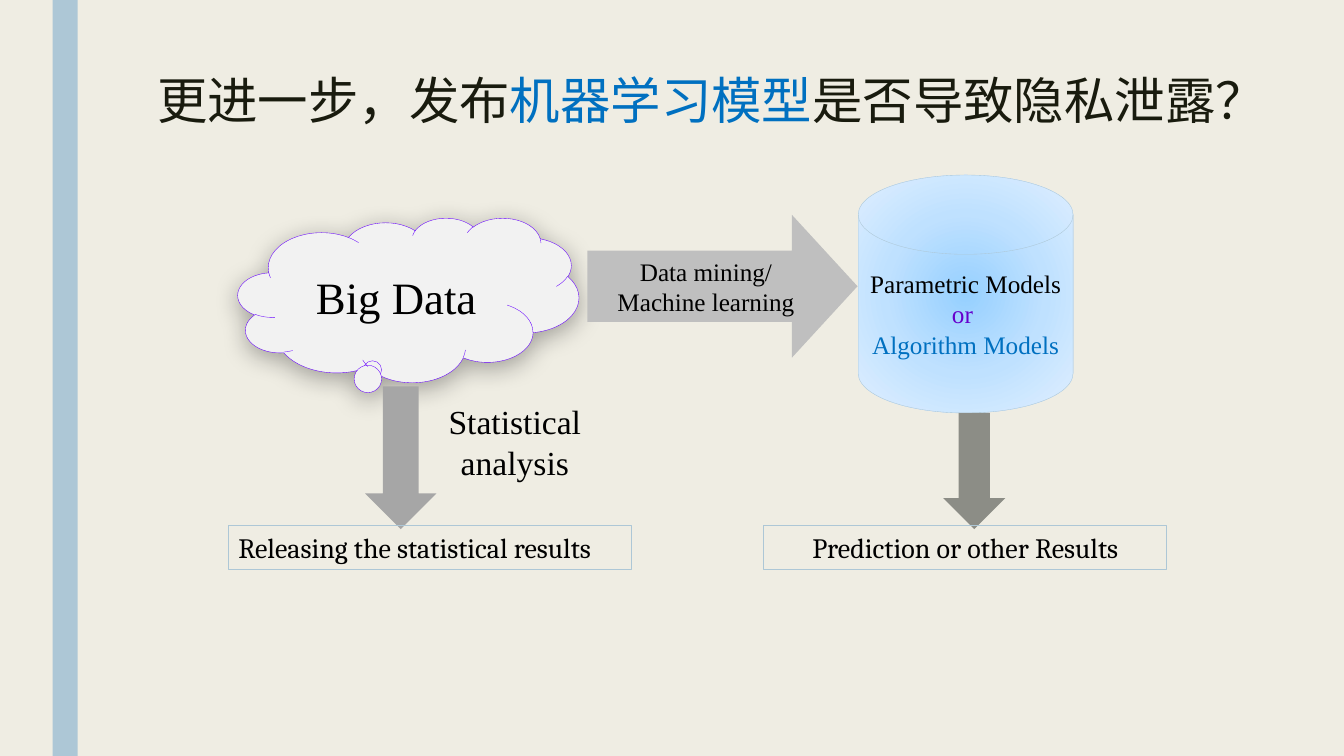
import pptx
import pptx.util
import pptx.oxml
import pptx.dml.color
import pptx.enum.shapes
import pptx.enum.text

Pt = pptx.util.Pt
Kind = pptx.enum.shapes.MSO_SHAPE
Align = pptx.enum.text.PP_ALIGN
Anchor = pptx.enum.text.MSO_ANCHOR
SERIF = "Times New Roman"
DRAWING = 'xmlns:a="http://schemas.openxmlformats.org/drawingml/2006/main"'


def color(value):
    return pptx.dml.color.RGBColor.from_string(value)


def add_box(kind, left, top, width, height, fill=None, line=None, weight=0.25,
            lines=(), size=18, font=SERIF, align=Align.CENTER, anchor=Anchor.MIDDLE):
    box = page.shapes.add_shape(kind, Pt(left), Pt(top), Pt(width), Pt(height))
    box.shadow.inherit = False
    if fill:
        box.fill.solid()
        box.fill.fore_color.rgb = color(fill)
    else:
        box.fill.background()
    if line:
        box.line.color.rgb = color(line)
        box.line.width = Pt(weight)
    else:
        box.line.fill.background()
    frame = box.text_frame
    frame.word_wrap = True
    frame.vertical_anchor = anchor
    frame.text = "\n".join(lines)
    for para in frame.paragraphs:
        para.alignment = align
        for span in para.runs:
            span.font.size = Pt(size)
            span.font.name = font
            span.font.color.rgb = color("000000")
    return box


deck = pptx.Presentation()
deck.slide_width, deck.slide_height = Pt(960), Pt(540)
page = deck.slides.add_slide(deck.slide_layouts[5])
page.background.fill.solid()
page.background.fill.fore_color.rgb = color("EFEDE3")

add_box(Kind.RECTANGLE, 37.5, 0, 18, 540, "ADC7D6")

title = page.shapes.title
title.left, title.top, title.width, title.height = Pt(105), Pt(31), Pt(809.5), Pt(85.5)
title.text_frame.vertical_anchor = Anchor.MIDDLE
title_para = title.text_frame.paragraphs[0]
title_para.alignment = Align.LEFT
title_para.line_spacing = 0.89
for words, tint in (("更进一步，发布", "191B0E"), ("机器学习模型", "0070C0"),
                    ("是否导致隐私泄露？", "191B0E")):
    span = title_para.add_run()
    span.text = words
    span.font.size = Pt(36)
    span.font.name = "Lato"
    span.font.color.rgb = color(tint)

cloud = add_box(Kind.CLOUD_CALLOUT, 170, 155.5, 243.5, 117.5, "F2F2F2", "6600FF",
                lines=["Big Data"], size=32)
cloud.adjustments[0] = -0.104
cloud.adjustments[1] = 0.42
effects = cloud._element.spPr.find(pptx.oxml.ns.qn("a:effectLst"))
effects.append(pptx.oxml.parse_xml(
    f'<a:outerShdw {DRAWING} blurRad="{Pt(17.8)}" dist="{Pt(4)}" dir="5220000" rotWithShape="0">'
    '<a:srgbClr val="000000"><a:alpha val="33000"/></a:srgbClr></a:outerShdw>'))

models = add_box(Kind.FLOWCHART_MAGNETIC_DISK, 613, 125, 153.5, 170, line="ADC7D6",
                 lines=["Parametric Models ", "Algorithm Models"])
parametric, algorithm = models.text_frame.paragraphs
span = parametric.add_run()
span.text = "or "
span.font.size = Pt(18)
span.font.name = SERIF
span.font.color.rgb = color("6600CC")
algorithm.runs[0].font.color.rgb = color("0070C0")
stops = "".join(
    f'<a:gs pos="{place * 1000}"><a:srgbClr val="{tint}"/></a:gs>'
    for place, tint in ((0, "96D0FF"), (50, "BFE1FF"), (100, "E0EFFF")))
gradient = pptx.oxml.parse_xml(
    f'<a:gradFill {DRAWING} rotWithShape="1"><a:gsLst>{stops}</a:gsLst><a:path path="circle">'
    '<a:fillToRect l="50000" t="50000" r="50000" b="50000"/></a:path></a:gradFill>')
properties = models._element.spPr
properties.replace(properties.find(pptx.oxml.ns.qn("a:noFill")), gradient)

mining = add_box(Kind.RIGHT_ARROW, 419.5, 153.5, 193, 102, "BFBFBF",
                 lines=["Data mining/", "Machine learning"])
mining.adjustments[1] = 0.459
add_box(Kind.DOWN_ARROW, 673.75, 295, 44.5, 83, "8C8D86")
add_box(Kind.DOWN_ARROW, 260.75, 276, 51, 102, "A6A6A6")

label = page.shapes.add_textbox(Pt(304.5), Pt(283), Pt(126.5), Pt(65.5))
label.text_frame.word_wrap = True
label.text_frame.text = "Statistical analysis"
label_para = label.text_frame.paragraphs[0]
label_para.alignment = Align.CENTER
label_para.space_before = Pt(12)
label_font = label_para.runs[0].font
label_font.size = Pt(24)
label_font.name = SERIF
label_font.color.rgb = color("000000")

for left, words, align in ((163.25, "Releasing the statistical results", Align.LEFT),
                           (545.5, "Prediction or other Results", Align.CENTER)):
    add_box(Kind.RECTANGLE, left, 375.25, 288, 31.5, line="ADC7D6", weight=0.75,
            lines=[words], size=20, font="Cambria", align=align, anchor=Anchor.TOP)

deck.save("out.pptx")
